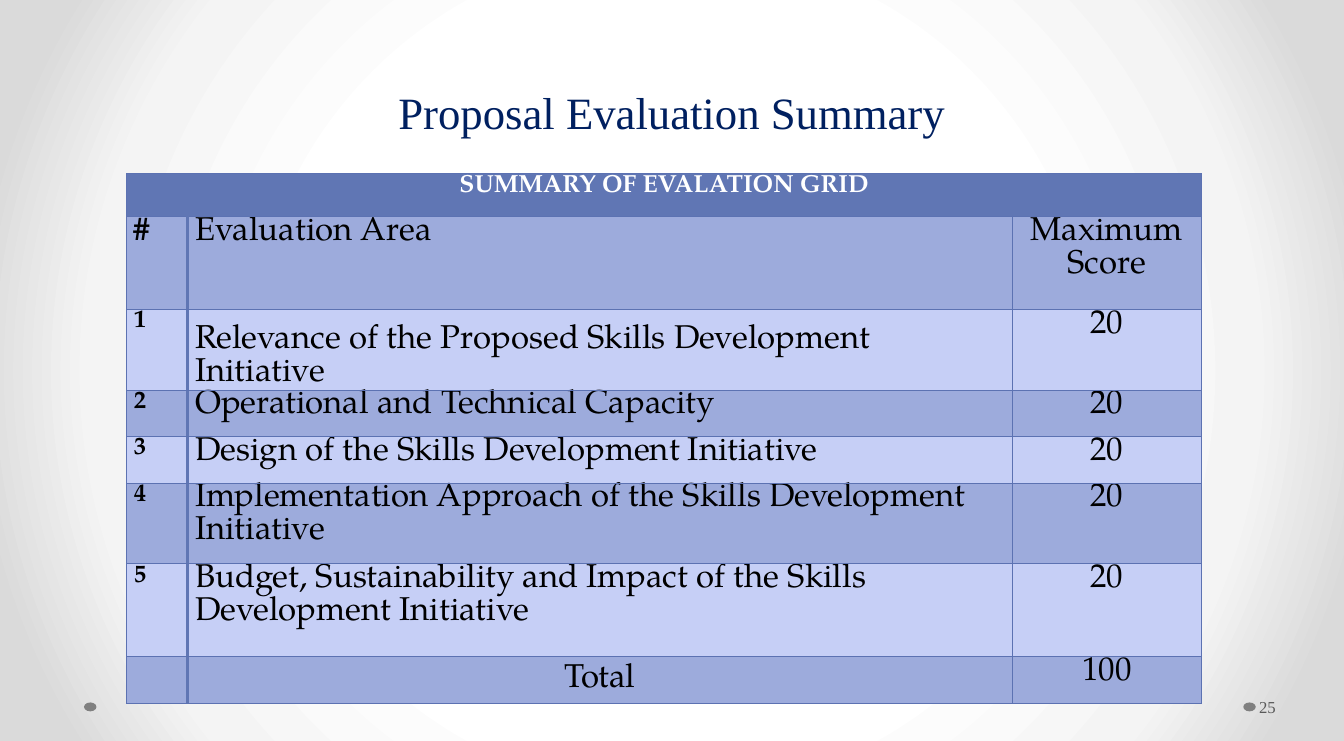
from lxml import etree
from pptx import Presentation
from pptx.dml.color import RGBColor
from pptx.enum.shapes import MSO_SHAPE
from pptx.enum.text import MSO_ANCHOR, MSO_AUTO_SIZE, PP_ALIGN
from pptx.oxml import parse_xml
from pptx.oxml.ns import nsdecls, qn
from pptx.util import Pt

LEFT, CENTER = PP_ALIGN.LEFT, PP_ALIGN.CENTER
TOP, MIDDLE, BOTTOM = MSO_ANCHOR.TOP, MSO_ANCHOR.MIDDLE, MSO_ANCHOR.BOTTOM
NO_AUTOFIT = MSO_AUTO_SIZE.NONE
ELLIPSE = MSO_SHAPE.OVAL

SERIF, TABLE_FONT = "Times New Roman", "TeX Gyre Pagella"
HEADER, BAND, LIGHT = "6076B4", "9DABDC", "C6CFF6"
GRID = "5C72B2"

AREAS = [
    "Relevance of the Proposed Skills Development Initiative",
    "Operational and Technical Capacity",
    "Design of the Skills Development Initiative",
    "Implementation Approach of the Skills Development Initiative",
    "Budget, Sustainability and Impact of the Skills Development Initiative",
]
AREA_SCORE = 20
COL_WIDTHS = [44.6, 600.5, 138.2]
ROW_HEIGHTS = [31, 67.7, 59, 33.8, 33.8, 59, 67.7, 33.8]


def color(hex_value):
    return RGBColor.from_string(hex_value)


def write(tf, text, size=24, font=TABLE_FONT, fill="000000", bold=False,
          align=LEFT, spacing=None):
    p = tf.paragraphs[0]
    p.alignment = align
    if spacing:
        p.line_spacing = Pt(spacing)
    r = p.add_run()
    r.text = text
    r.font.size = Pt(size)
    r.font.name = font
    r.font.bold = bold
    r.font.color.rgb = color(fill)


def set_background(slide):
    stops = "".join(
        f'<a:gs pos="{pos * 1000}"><a:srgbClr val="{value}"/></a:gs>'
        for pos, value in [(50, "FFFFFF"), (76, "F4F4F4"), (92, "DADADA")])
    bg = parse_xml(
        f'<p:bg {nsdecls("p", "a")}><p:bgPr><a:gradFill rotWithShape="1">'
        f'<a:gsLst>{stops}</a:gsLst><a:path path="circle">'
        '<a:fillToRect l="50000" t="50000" r="50000" b="50000"/></a:path>'
        '</a:gradFill><a:effectLst/></p:bgPr></p:bg>')
    slide.element.find(qn("p:cSld")).insert(0, bg)


def add_dot(slide, left):
    s = slide.shapes.add_shape(ELLIPSE, Pt(left), Pt(511.9), Pt(9.1), Pt(6.5))
    s.shadow.inherit = False
    s.fill.solid()
    s.fill.fore_color.rgb = color("808080")
    s.line.fill.background()


def set_title(slide, text):
    s = slide.shapes.title
    s.left, s.top, s.width, s.height = Pt(49), Pt(-5.8), Pt(881.3), Pt(110.2)
    tf = s.text_frame
    tf.auto_size = NO_AUTOFIT
    tf.vertical_anchor = BOTTOM
    write(tf, text, size=32.6, font=SERIF, fill="002060", align=CENTER,
          spacing=59.2)


def add_page_number(slide, text):
    s = slide.shapes.add_textbox(Pt(915.1), Pt(500.4), Pt(60.5), Pt(28.8))
    tf = s.text_frame
    tf.word_wrap = True
    tf.vertical_anchor = MIDDLE
    tf.margin_left = Pt(2.2)
    tf.margin_right = tf.margin_top = tf.margin_bottom = Pt(3.6)
    write(tf, text, size=12.2, font=SERIF, fill="595959")


def set_border(cell, side, value, width):
    ln = etree.SubElement(cell._tc.get_or_add_tcPr(), qn(f"a:ln{side}"),
                          w=str(Pt(width)))
    fill = etree.SubElement(ln, qn("a:solidFill"))
    etree.SubElement(fill, qn("a:srgbClr"), val=value)


def format_cell(cell, row, col):
    # Borders come first, since the fill has to follow them
    for side in "LRTB":
        divider = row > 0 and (col, side) in [(0, "R"), (1, "L")]
        set_border(cell, side, HEADER if divider else GRID,
                   2.25 if divider else 0.75)
    cell.fill.solid()
    cell.fill.fore_color.rgb = color(
        HEADER if row == 0 else BAND if row % 2 else LIGHT)
    cell.margin_left = cell.margin_right = Pt(5.4)
    cell.margin_top = cell.margin_bottom = 0


def write_cell(cell, text, size=24, anchor=TOP, **style):
    cell.vertical_anchor = anchor
    write(cell.text_frame, text, size=size, spacing=size, **style)


def add_score_table(slide):
    table = slide.shapes.add_table(
        len(ROW_HEIGHTS), len(COL_WIDTHS), Pt(92.2), Pt(126.7),
        Pt(sum(COL_WIDTHS)), Pt(sum(ROW_HEIGHTS))).table
    for column, width in zip(table.columns, COL_WIDTHS):
        column.width = Pt(width)
    for i, height in enumerate(ROW_HEIGHTS):
        table.rows[i].height = Pt(height)
        for j in range(len(COL_WIDTHS)):
            format_cell(table.cell(i, j), i, j)

    # Heading rows
    table.cell(0, 0).merge(table.cell(0, 2))
    write_cell(table.cell(0, 0), "SUMMARY OF EVALATION GRID", size=18,
               fill="FFFFFF", bold=True, align=CENTER)
    write_cell(table.cell(1, 0), "#", bold=True)
    write_cell(table.cell(1, 1), "Evaluation Area")
    write_cell(table.cell(1, 2), "Maximum Score", align=CENTER)

    # One row for each area
    for n, area in enumerate(AREAS, 1):
        write_cell(table.cell(n + 1, 0), str(n), size=18, bold=True)
        write_cell(table.cell(n + 1, 1), area,
                   anchor=BOTTOM if n == 1 else TOP)
        write_cell(table.cell(n + 1, 2), str(AREA_SCORE), align=CENTER)

    # Total
    total = len(ROW_HEIGHTS) - 1
    write_cell(table.cell(total, 1), "Total", anchor=MIDDLE, align=CENTER)
    write_cell(table.cell(total, 2), str(AREA_SCORE * len(AREAS)),
               align=CENTER)


def main():
    prs = Presentation()
    prs.slide_width, prs.slide_height = Pt(979.2), Pt(540)
    slide = prs.slides.add_slide(prs.slide_layouts[5])
    set_background(slide)
    for left in (905.8, 61.2):
        add_dot(slide, left)
    set_title(slide, "Proposal Evaluation Summary")
    add_score_table(slide)
    add_page_number(slide, "25")
    prs.save("out.pptx")


if __name__ == "__main__":
    main()
